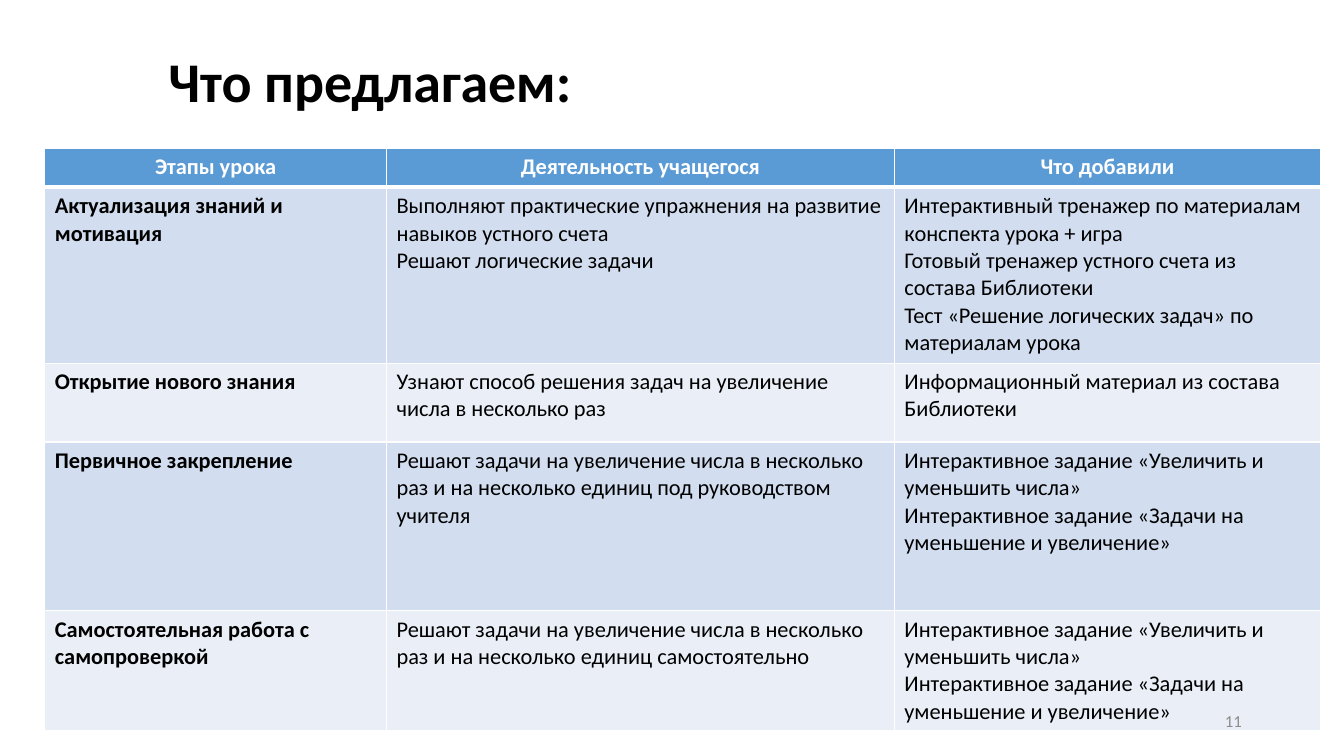
from lxml import etree
from pptx import Presentation
from pptx.dml.color import RGBColor
from pptx.enum import text
from pptx.oxml import ns
from pptx.util import Cm, Pt


def color(value):
    return RGBColor.from_string(value)


def write(frame, lines, align, style, line_spacing=None):
    frame.text = "\n".join(lines)
    for paragraph in frame.paragraphs:
        paragraph.alignment = align
        paragraph.line_spacing = line_spacing
        font = paragraph.runs[0].font
        font.name = "Calibri"
        font.color.rgb = color(style["color"])
        for key in ("size", "bold"):
            setattr(font, key, style[key])


LEFT, CENTER, RIGHT = text.PP_ALIGN.LEFT, text.PP_ALIGN.CENTER, text.PP_ALIGN.RIGHT

prs = Presentation()
prs.slide_width, prs.slide_height = Cm(33.87), Cm(19.05)
slide = prs.slides.add_slide(prs.slide_layouts[5])

heading = slide.shapes.title
place = {"left": Cm(3.99), "top": Cm(0.81), "width": Cm(27.97), "height": Cm(2.62)}
for key, value in place.items():
    setattr(heading, key, value)
heading.text_frame.auto_size = text.MSO_AUTO_SIZE.NONE
heading.text_frame.vertical_anchor = text.MSO_ANCHOR.MIDDLE
write(heading.text_frame, ["Что предлагаем:"], LEFT,
      {"size": Pt(40), "bold": True, "color": "000000"}, 0.9)

tasks = ["Интерактивное задание «Увеличить и уменьшить числа»",
         "Интерактивное задание «Задачи на уменьшение и увеличение»"]
lesson = [
    (0.98, ["Этапы урока"], ["Деятельность учащегося"], ["Что добавили"]),
    (4.43, ["Актуализация знаний и мотивация"],
     ["Выполняют практические упражнения на развитие навыков устного счета",
      "Решают логические задачи"],
     ["Интерактивный тренажер по материалам конспекта урока + игра",
      "Готовый тренажер устного счета из состава Библиотеки",
      "Тест «Решение логических задач» по материалам урока"]),
    (1.99, ["Открытие нового знания"],
     ["Узнают способ решения задач на увеличение числа в несколько раз"],
     ["Информационный материал из состава Библиотеки"]),
    (4.25, ["Первичное закрепление"],
     ["Решают задачи на увеличение числа в несколько раз и на несколько единиц "
      "под руководством учителя"], tasks),
    (3.03, ["Самостоятельная работа с самопроверкой"],
     ["Решают задачи на увеличение числа в несколько раз и на несколько единиц "
      "самостоятельно"], tasks),
]
column_widths = [8.61, 12.8, 10.74]
stages = slide.shapes.add_table(len(lesson), len(column_widths), Cm(1.13), Cm(3.74),
                                Cm(sum(column_widths)),
                                Cm(sum(row[0] for row in lesson))).table
for column, width in zip(stages.columns, column_widths):
    column.width = Cm(width)

for r, (height, *entries) in enumerate(lesson):
    stages.rows[r].height = Cm(height)
    header = r == 0
    band = "5B9BD5" if header else ("EAEFF7", "D2DEEF")[r % 2]
    for c, lines in enumerate(entries):
        cell = stages.cell(r, c)
        write(cell.text_frame, lines, CENTER if header else LEFT,
              {"size": Pt(16), "bold": header or c == 0,
               "color": "FFFFFF" if header else "000000"})
        properties = cell._tc.get_or_add_tcPr()
        for side in "LRTB":
            thick = (header and side == "B") or (r == 1 and side == "T")
            border = etree.SubElement(properties, ns.qn(f"a:ln{side}"),
                                      w=str(Pt(3 if thick else 1)))
            paint = etree.SubElement(border, ns.qn("a:solidFill"))
            etree.SubElement(paint, ns.qn("a:srgbClr"), val="FFFFFF")
        cell.fill.solid()
        cell.fill.fore_color.rgb = color(band)

page_number = slide.shapes.add_textbox(Cm(23.93), Cm(17.65), Cm(7.62), Cm(1.02)).text_frame
page_number.word_wrap = True
page_number.vertical_anchor = text.MSO_ANCHOR.MIDDLE
write(page_number, ["11"], RIGHT, {"size": Pt(12), "bold": False, "color": "8C8C8C"})

prs.save("out.pptx")
